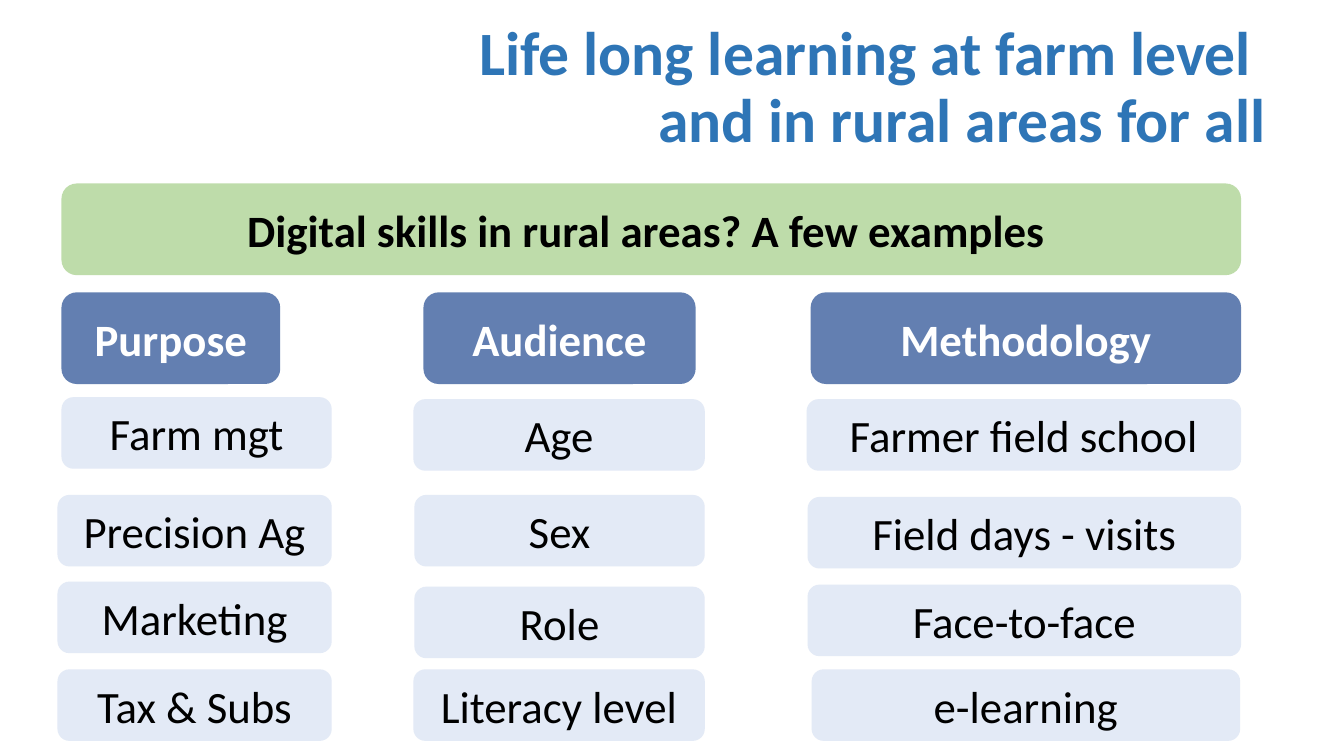
"""Build a slide on digital skills in rural areas: a title, a banner and three columns of examples."""
from lxml import etree
from pptx import Presentation
from pptx.dml.color import RGBColor
from pptx.enum.shapes import MSO_SHAPE
from pptx.enum.text import MSO_ANCHOR, MSO_AUTO_SIZE, PP_ALIGN
from pptx.oxml.ns import qn
from pptx.util import Pt

PX = 9144
FONT = "Calibri"
OPACITY = "75000"
ROUNDED = MSO_SHAPE.ROUNDED_RECTANGLE
MIDDLE = MSO_ANCHOR.MIDDLE
NO_AUTOFIT = MSO_AUTO_SIZE.NONE
CENTER, RIGHT = PP_ALIGN.CENTER, PP_ALIGN.RIGHT
COLORS = {
    "title": "2E75B6",
    "banner": "A9D18E",
    "heading": "2F5597",
    "item": "DAE3F3",
    "dark": "000000",
    "light": "FFFFFF",
}
HEADING_TOP, HEADING_HEIGHT, ITEM_HEIGHT = 290, 91, 71

COLUMNS = [
    ("Purpose", 61, 217, [
        ("Farm mgt", 61, 394, 268),
        ("Precision Ag", 57, 491, 272),
        ("Marketing", 57, 577, 272),
        ("Tax & Subs", 57, 664, 272),
    ]),
    ("Audience", 420, 270, [
        ("Age", 410, 396, 289),
        ("Sex", 411, 491, 288),
        ("Role", 411, 582, 288),
        ("Literacy level", 410, 664, 289),
    ]),
    ("Methodology", 804, 427, [
        ("Farmer field school", 800, 396, 431),
        ("Field days - visits", 801, 493, 430),
        ("Face-to-face", 801, 580, 430),
        ("e-learning", 805, 664, 425),
    ]),
]


def format_text(text_frame, text, size, color, bold, alignment):
    text_frame.text = text
    text_frame.word_wrap = True
    text_frame.auto_size = NO_AUTOFIT
    text_frame.vertical_anchor = MIDDLE
    paragraph = text_frame.paragraphs[0]
    paragraph.alignment = alignment
    for run in paragraph.runs:
        run.font.name = FONT
        run.font.size = Pt(size)
        run.font.bold = bold
        run.font.color.rgb = RGBColor.from_string(COLORS[color])


def add_box(text, left, top, width, height, fill, color, bold):
    shape = slide.shapes.add_shape(ROUNDED, left * PX, top * PX, width * PX, height * PX)
    shape.shadow.inherit = False
    shape.line.fill.background()
    shape.fill.solid()
    shape.fill.fore_color.rgb = RGBColor.from_string(COLORS[fill])
    fill_color = shape.fill._xPr.find(qn("a:solidFill"))[0]
    etree.SubElement(fill_color, qn("a:alpha")).set("val", OPACITY)
    text_frame = shape.text_frame
    text_frame.margin_left = text_frame.margin_right = 8 * PX
    text_frame.margin_top = text_frame.margin_bottom = 8 * PX
    format_text(text_frame, text, 32, color, bold, CENTER)


presentation = Presentation()
presentation.slide_width = 1333 * PX
presentation.slide_height = 750 * PX
slide = presentation.slides.add_slide(presentation.slide_layouts[5])

title = slide.shapes.title
title.left, title.top, title.width, title.height = 230 * PX, 26 * PX, 1036 * PX, 125 * PX
title_text = "Life long learning at farm level \vand in rural areas for all"
format_text(title.text_frame, title_text, 44, "title", True, RIGHT)
title.text_frame.paragraphs[0].line_spacing = 0.9

add_box("Digital skills in rural areas? A few examples ", 61, 182, 1170, HEADING_HEIGHT,
        "banner", "dark", True)

for heading, heading_left, heading_width, items in COLUMNS:
    add_box(heading, heading_left, HEADING_TOP, heading_width, HEADING_HEIGHT,
            "heading", "light", True)
    for item, left, top, width in items:
        add_box(item, left, top, width, ITEM_HEIGHT, "item", "dark", False)

presentation.save("out.pptx")
